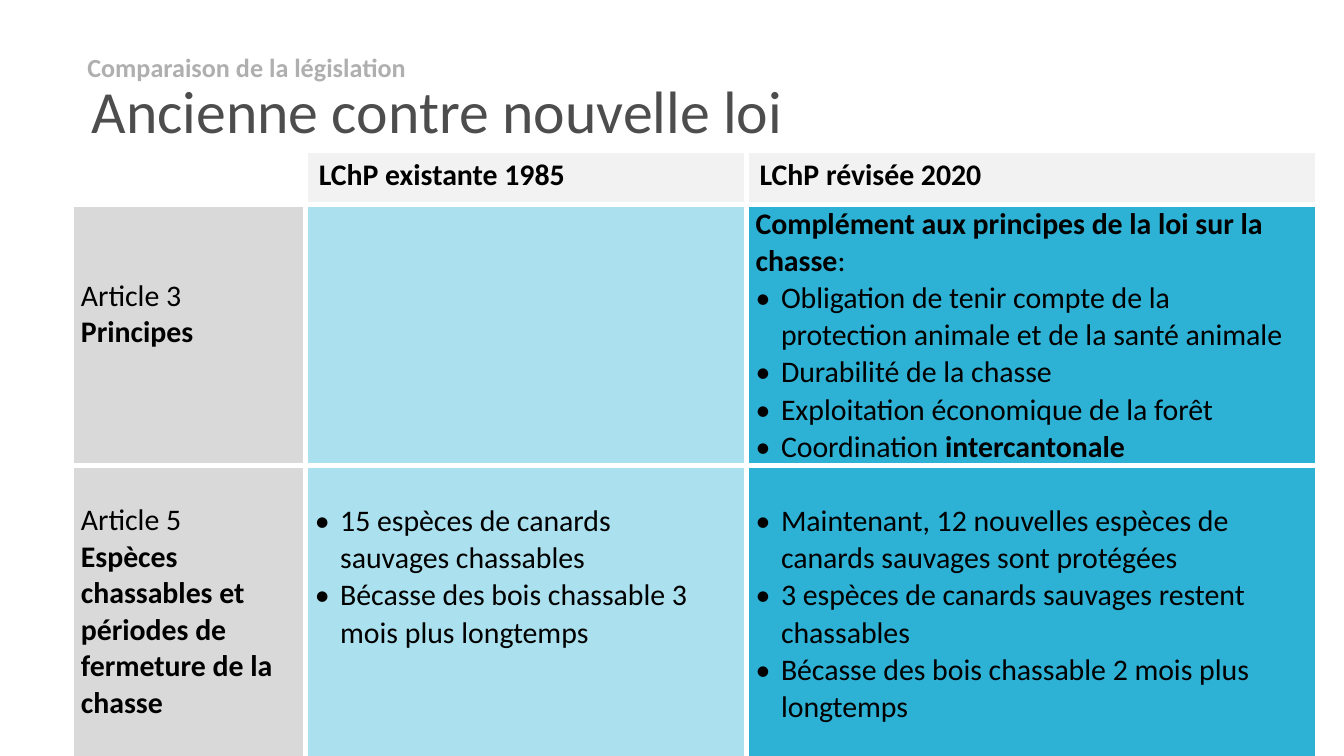
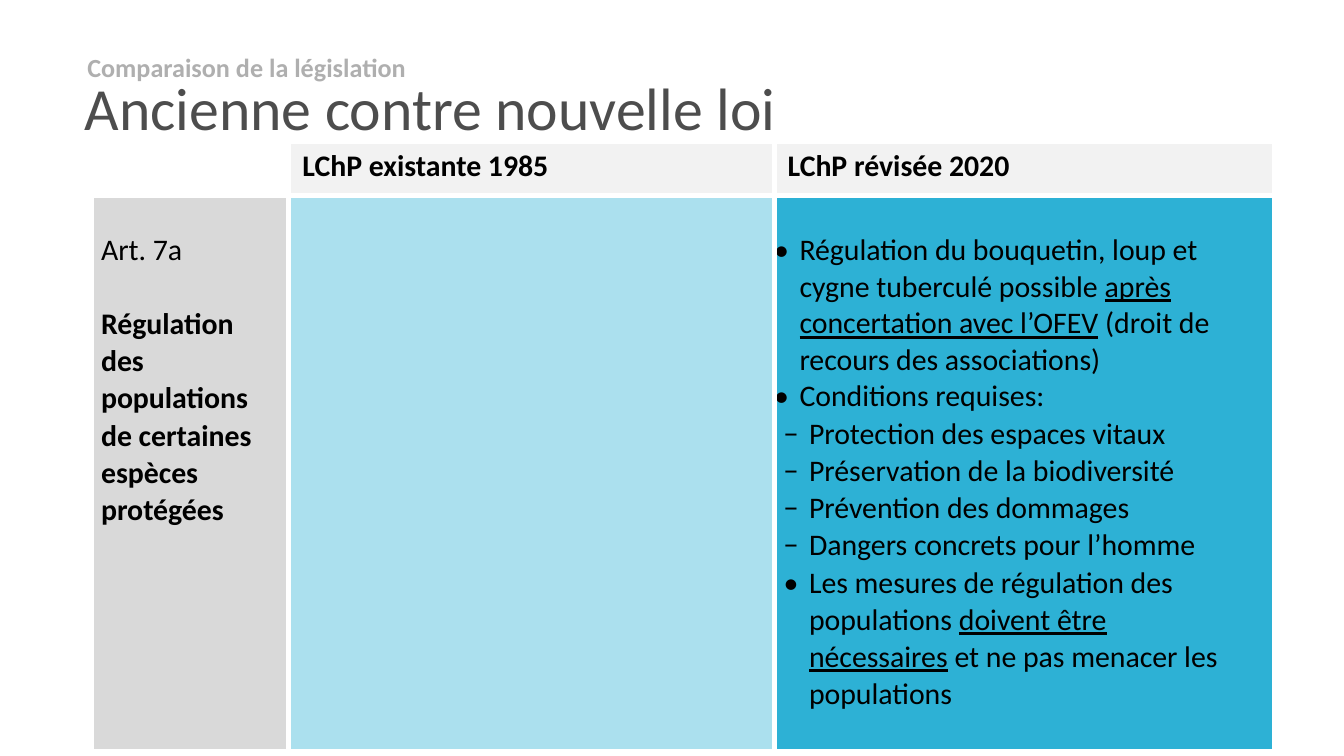
import pptx
import pptx.util
import pptx.dml.color
import pptx.enum.text
import pptx.oxml
import pptx.oxml.ns
import lxml.etree

Cm = pptx.util.Cm
Pt = pptx.util.Pt
RGBColor = pptx.dml.color.RGBColor
qn = pptx.oxml.ns.qn

FONT = "Calibri"
BLACK = RGBColor(0x00, 0x00, 0x00)
WHITE = RGBColor(0xFF, 0xFF, 0xFF)
TITLE_GREY = RGBColor(0x4D, 0x4D, 0x4D)
KICKER_GREY = RGBColor(0xAF, 0xAF, 0xAF)
HEADER_GREY = RGBColor(0xF2, 0xF2, 0xF2)
LABEL_GREY = RGBColor(0xD9, 0xD9, 0xD9)
OLD_BLUE = RGBColor(0xAB, 0xE0, 0xEE)
NEW_BLUE = RGBColor(0x2D, 0xB1, 0xD5)
COLUMN_FILLS = (LABEL_GREY, OLD_BLUE, NEW_BLUE)

KICKER = "Comparaison de la législation"
TITLE = "Ancienne contre nouvelle loi"
HEADERS = ("", "LChP existante 1985", "LChP révisée 2020")

LINE = 0.69
STYLES = {
    "label": dict(left=0.18, spacing=1),
    "label_gap": dict(left=0.18, spacing=1.02, before=19.5),
    "lead": dict(left=0.18, spacing=1.02),
    "bullet": dict(left=0.66, hang=0.48, symbol="•", spacing=1.02),
    "outer_bullet": dict(left=0.48, hang=0.48, symbol="•", spacing=1),
    "dash": dict(left=0.66, hang=0.48, symbol="−", spacing=1.02),
}


def cell_text(paragraphs, top=LINE, right=0):
    return dict(paragraphs=paragraphs, top=top, right=right)


EMPTY = cell_text([])

SLIDES = [
    dict(
        title_at=(1.73, 1.47),
        table_at=(1.35, 2.84),
        columns=(4.42, 8.33, 10.8),
        heights=(0.93, 4.93, 5.59),
        rows=[
            (
                cell_text([
                    ("label", [("Article 3", "")]),
                    ("label", [("Principes", "b")]),
                ], top=2 * LINE),
                EMPTY,
                cell_text([
                    ("lead", [("Complément aux principes de la loi sur la chasse", "b"), (":", "")]),
                    ("bullet", [("Obligation de tenir compte de la protection animale "
                                 "et de la santé animale", "")]),
                    ("bullet", [("Durabilité de la chasse", "")]),
                    ("bullet", [("Exploitation économique de la forêt", "")]),
                    ("bullet", [("Coordination ", ""), ("intercantonale", "b")]),
                ], top=0, right=0.5),
            ),
            (
                cell_text([
                    ("label", [("Article 5", "")]),
                    ("label", [("Espèces chassables et périodes de fermeture de la chasse", "b")]),
                ]),
                cell_text([
                    ("bullet", [("15 espèces de canards sauvages chassables", "")]),
                    ("bullet", [("Bécasse des bois chassable 3 mois plus longtemps", "")]),
                ], right=0.6),
                cell_text([
                    ("bullet", [("Maintenant, 12 nouvelles espèces de canards sauvages "
                                 "sont protégées", "")]),
                    ("bullet", [("3 espèces de canards sauvages restent chassables", "")]),
                    ("bullet", [("Bécasse des bois chassable 2 mois plus longtemps", "")]),
                ]),
            ),
        ],
    ),
    dict(
        title_at=(1.6, 1.42),
        table_at=(1.73, 2.67),
        columns=(3.73, 9.17, 9.45),
        heights=(0.94, 10.49),
        rows=[
            (
                cell_text([
                    ("label", [("Art. 7a", "")]),
                    ("label_gap", [("Régulation des populations de certaines "
                                    "espèces protégées", "b")]),
                ], right=0.4),
                EMPTY,
                cell_text([
                    ("outer_bullet", [
                        ("Régulation du bouquetin, loup et cygne tuberculé possible ", ""),
                        ("après concertation avec l’OFEV", "u"),
                        (" (droit de recours des associations)", ""),
                    ]),
                    ("outer_bullet", [("Conditions requises:", "")]),
                    ("dash", [("Protection des espaces vitaux", "")]),
                    ("dash", [("Préservation de la biodiversité", "")]),
                    ("dash", [("Prévention des dommages", "")]),
                    ("dash", [("Dangers concrets pour l’homme", "")]),
                    ("bullet", [
                        ("Les mesures de régulation des populations ", ""),
                        ("doivent être nécessaires", "u"),
                        (" et ne pas menacer les populations", ""),
                    ]),
                ], right=0.75),
            ),
        ],
    ),
]


def add_run(paragraph, text, size, color, marks=""):
    run = paragraph.add_run()
    run.text = text
    run.font.name = FONT
    run.font.size = Pt(size)
    run.font.color.rgb = color
    run.font.bold = "b" in marks
    if "u" in marks:
        run.font.underline = True


def set_indent(paragraph, left, hang=0, symbol=None):
    properties = paragraph._p.get_or_add_pPr()
    properties.set("marL", str(Cm(left)))
    properties.set("indent", str(-Cm(hang)))
    if symbol:
        color = lxml.etree.SubElement(properties, qn("a:buClr"))
        lxml.etree.SubElement(color, qn("a:srgbClr"), val=str(BLACK))
        lxml.etree.SubElement(properties, qn("a:buFont"), typeface=FONT)
        lxml.etree.SubElement(properties, qn("a:buChar"), char=symbol)


def set_heading(frame, text, size, color, spacing, bold=""):
    frame.word_wrap = True
    frame.auto_size = pptx.enum.text.MSO_AUTO_SIZE.NONE
    frame.vertical_anchor = pptx.enum.text.MSO_ANCHOR.TOP
    frame.margin_left = frame.margin_right = frame.margin_top = frame.margin_bottom = 0
    paragraph = frame.paragraphs[0]
    paragraph.alignment = pptx.enum.text.PP_ALIGN.LEFT
    paragraph.line_spacing = spacing
    add_run(paragraph, text, size, color, bold)
    return paragraph


def paint_cell(cell, color):
    cell.fill.solid()
    cell.fill.fore_color.rgb = color
    properties = cell._tc.get_or_add_tcPr()
    for position, side in enumerate(("a:lnL", "a:lnR", "a:lnT", "a:lnB")):
        border = lxml.etree.Element(qn(side), w=str(Pt(3)))
        fill = lxml.etree.SubElement(border, qn("a:solidFill"))
        lxml.etree.SubElement(fill, qn("a:srgbClr"), val=str(WHITE))
        properties.insert(position, border)


def fill_cell(cell, content):
    cell.margin_left = cell.margin_bottom = 0
    cell.margin_top = Cm(content["top"])
    cell.margin_right = Cm(content["right"])
    for index, (style_name, runs) in enumerate(content["paragraphs"]):
        frame = cell.text_frame
        paragraph = frame.add_paragraph() if index else frame.paragraphs[0]
        style = STYLES[style_name]
        paragraph.line_spacing = style["spacing"]
        paragraph.space_before = Pt(style.get("before", 0))
        set_indent(paragraph, style["left"], style.get("hang", 0), style.get("symbol"))
        for text, marks in runs:
            add_run(paragraph, text, 16, BLACK, marks)


def add_comparison(slide, content):
    columns, heights = content["columns"], content["heights"]
    left, top = content["table_at"]
    table = slide.shapes.add_table(
        len(heights), len(columns), Cm(left), Cm(top), Cm(sum(columns)), Cm(sum(heights))
    ).table
    table.first_row = table.horz_banding = False
    for column, width in zip(table.columns, columns):
        column.width = Cm(width)
    for row, height in zip(table.rows, heights):
        row.height = Cm(height)
    for cell, header in zip(table.rows[0].cells, HEADERS):
        paint_cell(cell, HEADER_GREY if header else WHITE)
        if header:
            add_run(cell.text_frame.paragraphs[0], header, 16, BLACK, "b")
    for row, texts in zip(list(table.rows)[1:], content["rows"]):
        for cell, text, color in zip(row.cells, texts, COLUMN_FILLS):
            paint_cell(cell, color)
            fill_cell(cell, text)


def add_slide(deck, content):
    slide = deck.slides.add_slide(deck.slide_layouts[5])
    title = slide.shapes.title
    title.left, title.top = map(Cm, content["title_at"])
    title.width, title.height = Cm(22.78), Cm(1.65)
    set_heading(title.text_frame, TITLE, 32, TITLE_GREY, 0.97)
    kicker = slide.shapes.add_textbox(Cm(1.02), Cm(0.61), Cm(22.78), Cm(0.79))
    set_indent(set_heading(kicker.text_frame, KICKER, 14, KICKER_GREY, 1.61, "b"), 1.27, 0.64)
    add_comparison(slide, content)


def main():
    deck = pptx.Presentation()
    deck.slide_width, deck.slide_height = Cm(25.4), Cm(14.28)
    for content in SLIDES:
        add_slide(deck, content)
    deck.save("out.pptx")


if __name__ == "__main__":
    main()
